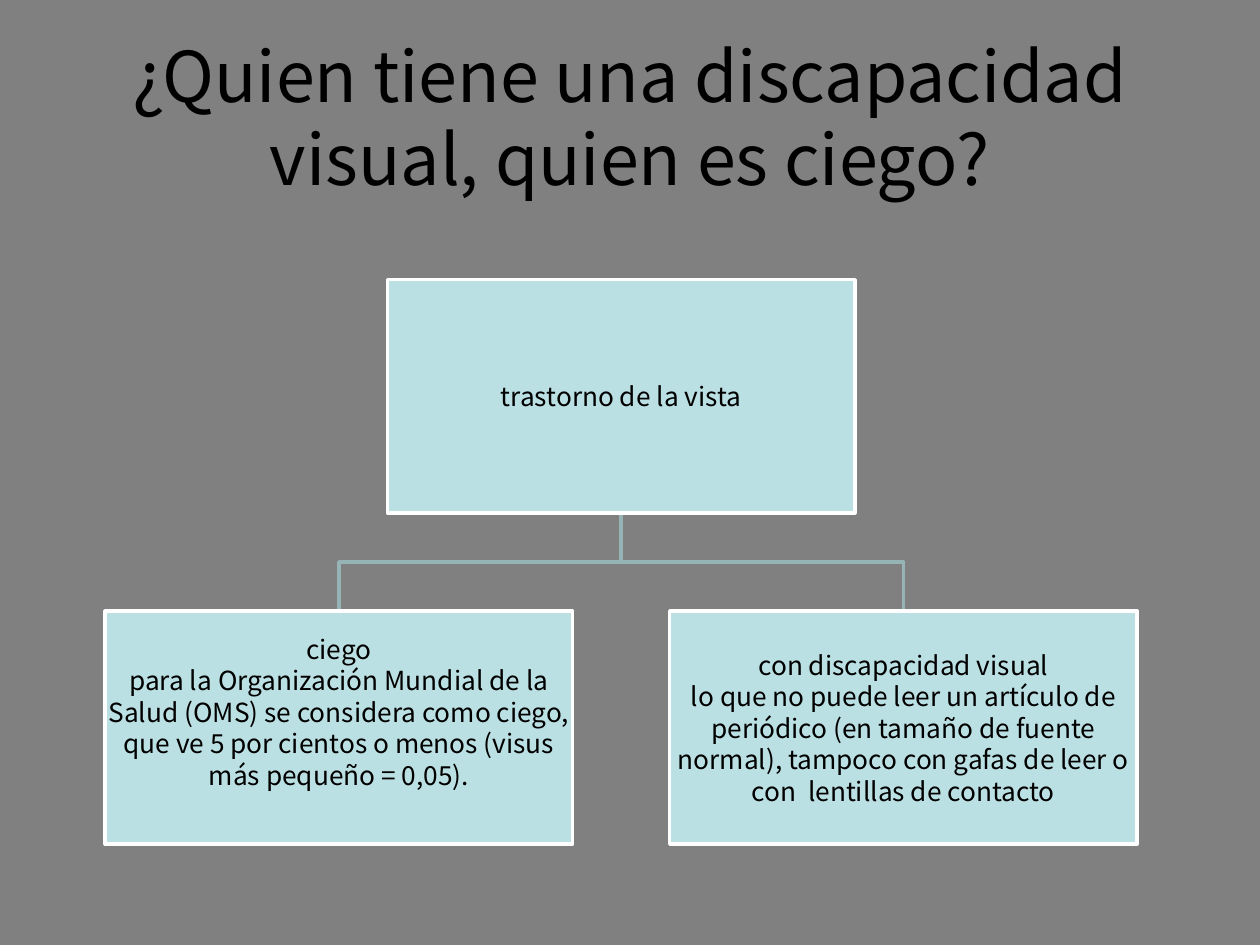
from pptx import Presentation, util as u
from pptx.dml.color import RGBColor
from pptx.enum import shapes, text


def color(value):
    return RGBColor.from_string(value)


class OrgChartSlide:
    FONT = "Noto Sans CJK KR"
    TEXT, BOX, BORDER, BRANCH = "000000", "BBE0E3", "FFFFFF", "96B3B6"
    WIDTH, HEIGHT = 3.71, 1.85

    def __init__(self, presentation, background):
        self.slide = presentation.slides.add_slide(presentation.slide_layouts[6])
        fill = self.slide.background.fill
        fill.solid()
        fill.fore_color.rgb = color(background)

    def add_lines(self, frame, lines, size, leading):
        """Fill a frame with centred paragraphs, size and leading in points."""
        frame.word_wrap = True
        frame.vertical_anchor = text.MSO_ANCHOR.MIDDLE
        for index, line in enumerate(lines):
            paragraph = frame.paragraphs[0] if index == 0 else frame.add_paragraph()
            paragraph.alignment = text.PP_ALIGN.CENTER
            paragraph.line_spacing = u.Pt(leading)
            run = paragraph.add_run()
            run.text = line
            run.font.name = self.FONT
            run.font.size = u.Pt(size)
            run.font.color.rgb = color(self.TEXT)

    def title(self, line, left, top, width, height):
        shape = self.slide.shapes.add_textbox(*map(u.Inches, (left, top, width, height)))
        self.add_lines(shape.text_frame, [line], size=40, leading=47.5)

    def box(self, center, top, lines, bottom_inset=0.01):
        shape = self.slide.shapes.add_shape(
            shapes.MSO_SHAPE.RECTANGLE, u.Inches(center - self.WIDTH / 2),
            u.Inches(top), u.Inches(self.WIDTH), u.Inches(self.HEIGHT))
        shape.shadow.inherit = False
        shape.fill.solid()
        shape.fill.fore_color.rgb = color(self.BOX)
        shape.line.color.rgb = color(self.BORDER)
        shape.line.width = u.Pt(2)
        frame = shape.text_frame
        frame.margin_left = frame.margin_right = frame.margin_top = u.Inches(0.01)
        frame.margin_bottom = u.Inches(bottom_inset)
        self.add_lines(frame, lines, size=15, leading=18)

    def branch(self, parent, child):
        """Draw an elbow line from a parent's bottom centre to a child's top centre."""
        (x1, y1), (x2, y2) = parent, child
        middle = (y1 + y2) / 2
        builder = self.slide.shapes.build_freeform(u.Inches(x1), u.Inches(y1))
        builder.add_line_segments(
            [(u.Inches(x), u.Inches(y)) for x, y in ((x1, middle), (x2, middle), (x2, y2))],
            close=False)
        shape = builder.convert_to_shape()
        shape.shadow.inherit = False
        shape.fill.background()
        shape.line.color.rgb = color(self.BRANCH)
        shape.line.width = u.Pt(2)


def main():
    presentation = Presentation()
    presentation.slide_width, presentation.slide_height = u.Inches(10), u.Inches(7.5)
    chart = OrgChartSlide(presentation, "808080")
    chart.title("¿Quien tiene una discapacidad visual, quien es ciego?", 0.5, 0.3, 9, 1.25)

    root_center, root_top, child_top, offset = 4.93, 2.22, 4.85, 2.24
    blind, impaired = root_center - offset, root_center + offset
    for child in (impaired, blind):
        chart.branch((root_center, root_top + chart.HEIGHT), (child, child_top))

    chart.box(root_center, root_top, ["trastorno de la vista"])
    chart.box(blind, child_top, [
        "ciego",
        "para la Organización Mundial de la Salud (OMS) se considera como ciego, "
        "que ve 5 por cientos o menos (visus más pequeño = 0,05)."], bottom_inset=0.26)
    chart.box(impaired, child_top, [
        "con discapacidad visual",
        "lo que no puede leer un artículo de periódico (en tamaño de fuente normal), "
        "tampoco con gafas de leer o con  lentillas de contacto"])
    presentation.save("out.pptx")


if __name__ == "__main__":
    main()
